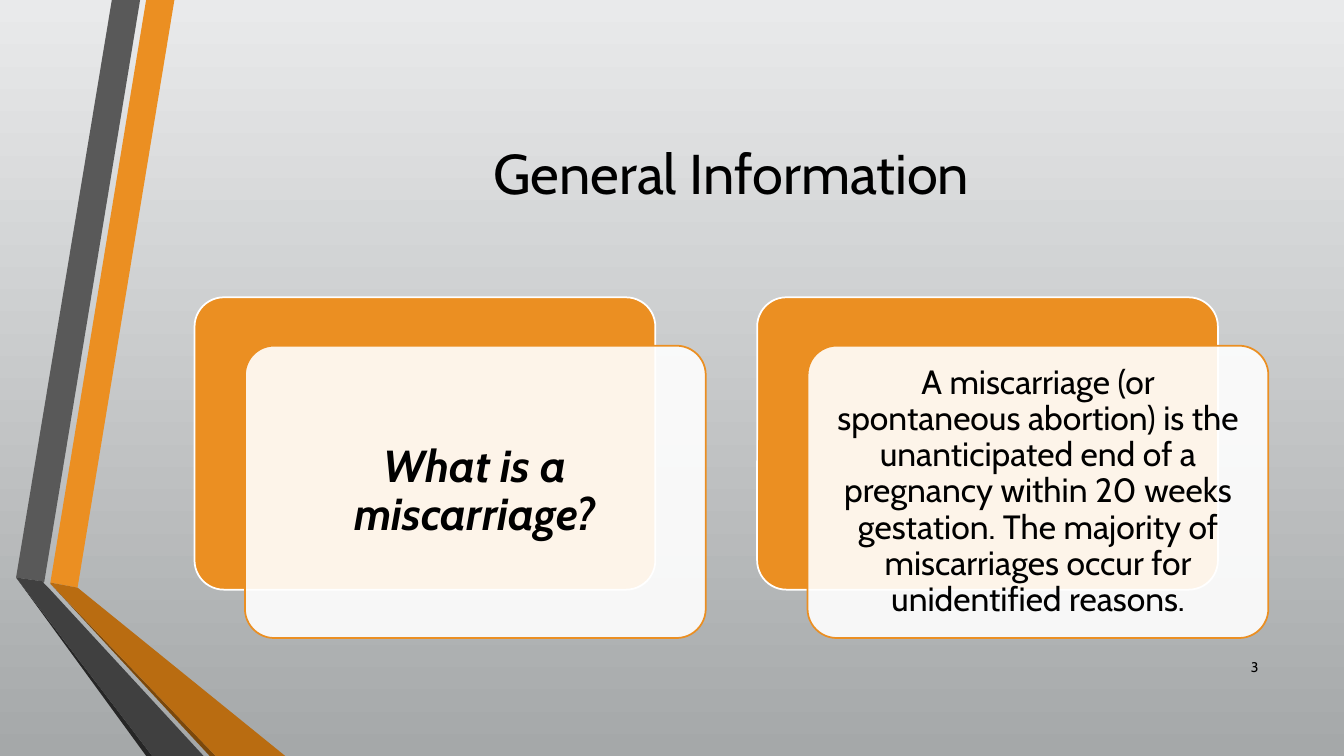
from lxml import etree
from pptx import Presentation
from pptx.dml.color import RGBColor
from pptx.enum.shapes import MSO_SHAPE
from pptx.enum.text import MSO_ANCHOR, PP_ALIGN
from pptx.oxml.ns import qn
from pptx.util import Inches, Pt

ROUNDED = MSO_SHAPE.ROUNDED_RECTANGLE
MIDDLE = MSO_ANCHOR.MIDDLE
CENTER, RIGHT = PP_ALIGN.CENTER, PP_ALIGN.RIGHT

FONT = "Cabin"
COLORS = {
    "sky": "E9EAEB",
    "ground": "A5A8A9",
    "orange": "EB8F22",
    "orange_dark": "B96C11",
    "orange_edge": "7B480B",
    "gray": "595959",
    "gray_dark": "404040",
    "gray_edge": "262626",
    "white": "FFFFFF",
    "text": "000000",
}

# Ribbon faces as corner points, from back to front
RIBBONS = [
    ("orange", [(0.5, 5.78), (0.77, 5.83), (1.73, 0), (1.45, 0)]),
    ("gray", [(1.39, 0), (1.11, 0), (0.16, 5.73), (0.44, 5.77)]),
    ("gray_edge", [(0.16, 5.73), (1.45, 7.5), (1.51, 7.5)]),
    ("orange_edge", [(0.5, 5.79), (2.08, 7.5), (2.14, 7.5)]),
    ("orange_dark", [(0.5, 5.79), (2.14, 7.5), (2.83, 7.5), (0.77, 5.83), (0.5, 5.78)]),
    ("gray_dark", [(2.02, 7.5), (0.48, 5.83), (0.43, 5.78), (0.44, 5.77),
                   (0.16, 5.73), (1.51, 7.5)]),
]

CARDS = [
    ("What is a miscarriage?", 32, True, 0.13),
    ("A miscarriage (or spontaneous abortion) is the unanticipated end of a "
     "pregnancy within 20 weeks gestation. The majority of miscarriages occur "
     "for unidentified reasons.", 24, False, 0.1),
]
CARD_LEFT, CARD_TOP, CARD_STEP = 1.93, 2.95, 5.58
PANEL_WIDTH, PANEL_HEIGHT = 4.57, 2.9
SHIFT_X, SHIFT_Y = 0.5, 0.48
TEXT_MARGIN = 0.09


def color(name):
    return RGBColor.from_string(COLORS[name])


def paint_background(page):
    fill = page.background.fill
    fill.gradient()
    fill.gradient_angle = 270
    for stop, name in zip(fill.gradient_stops, ("sky", "ground")):
        stop.color.rgb = color(name)


def draw_ribbons(page):
    for name, points in RIBBONS:
        corners = [(Inches(x), Inches(y)) for x, y in points]
        builder = page.shapes.build_freeform(*corners[0], scale=1.0)
        builder.add_line_segments(corners[1:], close=True)
        face = builder.convert_to_shape()
        face.shadow.inherit = False
        face.fill.solid()
        face.fill.fore_color.rgb = color(name)
        face.line.fill.background()


def add_text(page, bounds, words, size, align=CENTER, emphasis=False,
             inset=None, spacing=None):
    box = page.shapes.add_textbox(*map(Inches, bounds))
    frame = box.text_frame
    frame.word_wrap = True
    frame.vertical_anchor = MIDDLE
    if inset is not None:
        frame.margin_left = frame.margin_right = Inches(inset)
        frame.margin_top = frame.margin_bottom = Inches(inset)
    para = frame.paragraphs[0]
    para.alignment = align
    para.line_spacing = spacing
    span = para.add_run()
    span.text = words
    span.font.name = FONT
    span.font.size = Pt(size)
    span.font.color.rgb = color("text")
    span.font.bold = span.font.italic = emphasis


def add_panel(page, left, top, fill, line, opacity=100):
    panel = page.shapes.add_shape(
        ROUNDED, Inches(left), Inches(top), Inches(PANEL_WIDTH), Inches(PANEL_HEIGHT))
    panel.adjustments[0] = 0.1
    panel.shadow.inherit = False
    panel.fill.solid()
    panel.fill.fore_color.rgb = color(fill)
    panel.line.color.rgb = color(line)
    panel.line.width = Pt(1.25)
    if opacity < 100:
        tint = panel._element.spPr.find(qn("a:solidFill")).find(qn("a:srgbClr"))
        etree.SubElement(tint, qn("a:alpha")).set("val", str(opacity * 1000))


def draw_card(page, left, top, words, size, emphasis, inset):
    """Orange panel with a translucent white panel and its text shifted over it."""
    front_left, front_top = left + SHIFT_X, top + SHIFT_Y
    add_panel(page, left, top, "orange", "white")
    add_panel(page, front_left, front_top, "white", "orange", opacity=90)
    bounds = (front_left + TEXT_MARGIN, front_top + TEXT_MARGIN,
              PANEL_WIDTH - 2 * TEXT_MARGIN, PANEL_HEIGHT - 2 * TEXT_MARGIN)
    add_text(page, bounds, words, size, emphasis=emphasis, inset=inset, spacing=0.9)


def main():
    deck = Presentation()
    deck.slide_width, deck.slide_height = Inches(13.33), Inches(7.5)
    page = deck.slides.add_slide(deck.slide_layouts[6])
    paint_background(page)
    draw_ribbons(page)
    add_text(page, (1.93, 0.75, 10.65, 1.92), "General Information", 40)
    add_text(page, (11.98, 6.42, 0.6, 0.4), "3", 10, align=RIGHT)
    for index, card in enumerate(CARDS):
        draw_card(page, CARD_LEFT + index * CARD_STEP, CARD_TOP, *card)
    deck.save("out.pptx")


if __name__ == "__main__":
    main()
